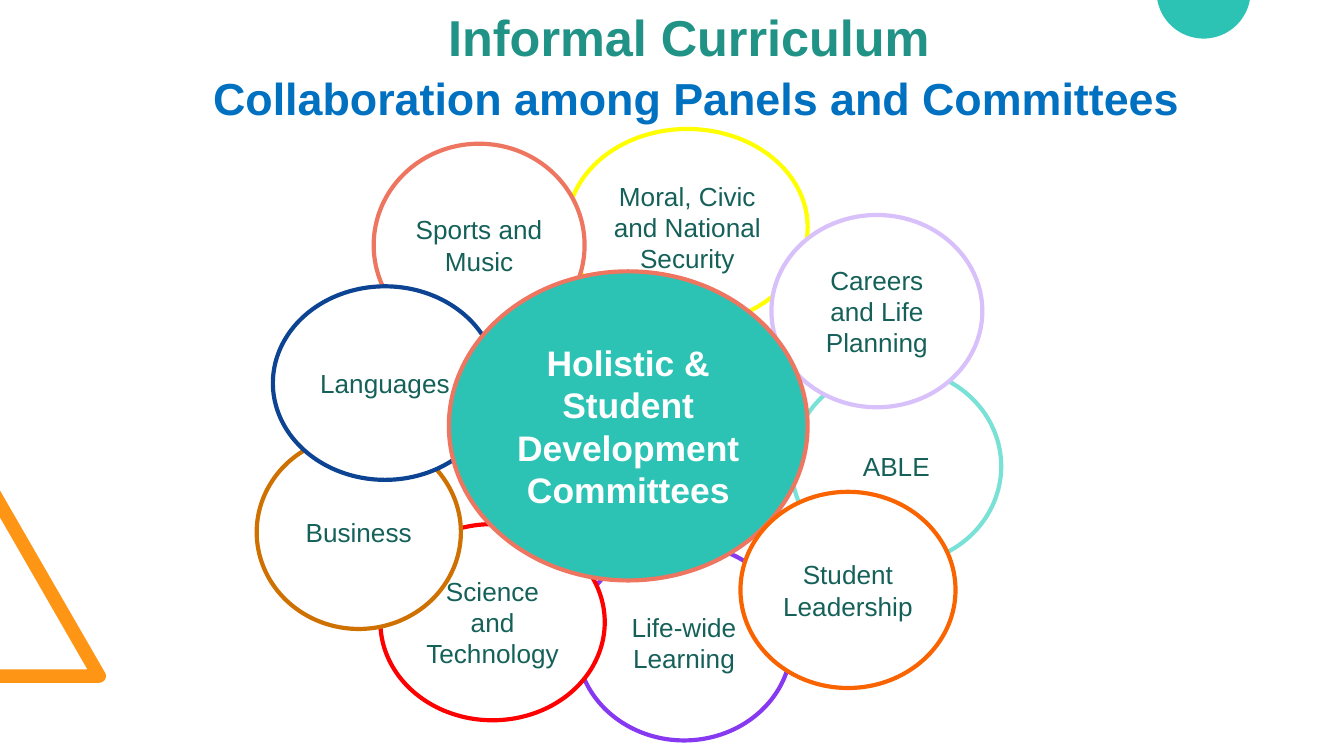
from math import asin, cos, degrees, radians, sin

from pptx import Presentation
from pptx.dml.color import RGBColor
from pptx.enum.shapes import MSO_SHAPE
from pptx.enum.text import MSO_ANCHOR, PP_ALIGN
from pptx.util import Pt

OVAL = MSO_SHAPE.OVAL
MIDDLE, BOTTOM = MSO_ANCHOR.MIDDLE, MSO_ANCHOR.BOTTOM
CENTER = PP_ALIGN.CENTER

FONT = "Arial"
TEAL, WHITE, CORAL, ORANGE = "2CC3B4", "FFFFFF", "EE7661", "FF9514"
PETAL_TEXT = {"size": 14, "bold": False, "color": "156159"}
CORE_TEXT = {"size": 19, "bold": True, "color": WHITE}

TITLE_BOX = (33.8, 5, 678.2, 64.1)
TITLE_LINES = [
    ("Informal Curriculum ", {"size": 27, "bold": True, "color": "209286"}, 0),
    ("Collaboration among Panels and Committees",
     {"size": 24, "bold": True, "color": "0070C0"}, 8),
]
OVALS = [
    ("ABLE", (424.1, 197.3, 112.3, 105.1), WHITE, "79E1D5", PETAL_TEXT),
    ("Life-wide Learning", (308.9, 291.6, 115.2, 105.1), WHITE, "8739F1", PETAL_TEXT),
    ("Moral, Civic and National Security", (303.8, 69.1, 128.9, 105.1),
     WHITE, "FFFF00", PETAL_TEXT),
    ("Sports and Music", (200.2, 77, 113, 108.7), WHITE, CORAL, PETAL_TEXT),
    ("Science and Technology", (203.8, 280.8, 120.2, 105.1), WHITE, "FF0000", PETAL_TEXT),
    ("Careers and Life Planning", (413.3, 115.2, 113, 103), WHITE, "D8C0FA", PETAL_TEXT),
    ("Business", (137.5, 233.3, 109.4, 103.7), WHITE, "CE7100", PETAL_TEXT),
    ("Languages", (146.2, 153.4, 120.2, 103.7), WHITE, "0C4392", PETAL_TEXT),
    ("Holistic & Student Development Committees", (240.5, 145.4, 192.2, 165.6),
     TEAL, CORAL, CORE_TEXT),
    ("Student Leadership", (396.7, 263.5, 115.2, 105.1), WHITE, "FA6400", PETAL_TEXT),
]
TRIANGLE_EDGE = [(0, 365.8), (0, 358.6), (46.8, 358.6), (0, 277.2), (0, 262.8)]
TRIANGLE_TIP = (53.2, 362.2, 3.6)
CORNER_CIRCLE = (644.8, -4.5, 25.2)


def rgb(value):
    return RGBColor.from_string(value)


def arc(circle, start, end, steps):
    x, y, radius = circle
    angles = [radians(start + (end - start) * i / steps) for i in range(steps + 1)]
    return [(x + radius * cos(a), y + radius * sin(a)) for a in angles]


def add_outline(slide, points, color):
    points = [(Pt(x), Pt(y)) for x, y in points]
    builder = slide.shapes.build_freeform(*points[0])
    builder.add_line_segments(points[1:], close=True)
    shape = builder.convert_to_shape()
    shape.shadow.inherit = False
    shape.fill.solid()
    shape.fill.fore_color.rgb = rgb(color)
    shape.line.fill.background()


def set_frame(shape, anchor):
    frame = shape.text_frame
    settings = {"word_wrap": True, "vertical_anchor": anchor,
                "margin_left": Pt(5.2), "margin_right": Pt(5.2),
                "margin_top": Pt(2.6), "margin_bottom": Pt(2.6)}
    for name, value in settings.items():
        setattr(frame, name, value)
    return frame


def write(paragraph, text, style):
    paragraph.alignment = CENTER
    font_settings = {"name": FONT, "size": Pt(style["size"]), "bold": style["bold"]}
    run = paragraph.add_run()
    run.text = text
    for name, value in font_settings.items():
        setattr(run.font, name, value)
    run.font.color.rgb = rgb(style["color"])


def add_title(slide):
    frame = set_frame(slide.shapes.add_textbox(*map(Pt, TITLE_BOX)), BOTTOM)
    for index, (text, style, space) in enumerate(TITLE_LINES):
        paragraph = frame.add_paragraph() if index else frame.paragraphs[0]
        paragraph.line_spacing = 0.8
        paragraph.space_before = Pt(space)
        write(paragraph, text, style)


def add_oval(slide, text, box, fill, line, style):
    shape = slide.shapes.add_shape(OVAL, *map(Pt, box))
    shape.shadow.inherit = False
    shape.fill.solid()
    shape.fill.fore_color.rgb = rgb(fill)
    shape.line.color.rgb = rgb(line)
    shape.line.width = Pt(2.25)
    write(set_frame(shape, MIDDLE).paragraphs[0], text, style)


def main():
    presentation = Presentation()
    presentation.slide_width, presentation.slide_height = Pt(720), Pt(405)
    slide = presentation.slides.add_slide(presentation.slide_layouts[6])
    add_outline(slide, TRIANGLE_EDGE + arc(TRIANGLE_TIP, -30, 90, 12), ORANGE)
    top_angle = degrees(asin(-CORNER_CIRCLE[1] / CORNER_CIRCLE[2]))
    add_outline(slide, arc(CORNER_CIRCLE, top_angle, 180 - top_angle, 60), TEAL)
    add_title(slide)
    for oval in OVALS:
        add_oval(slide, *oval)
    presentation.save("out.pptx")


if __name__ == "__main__":
    main()
